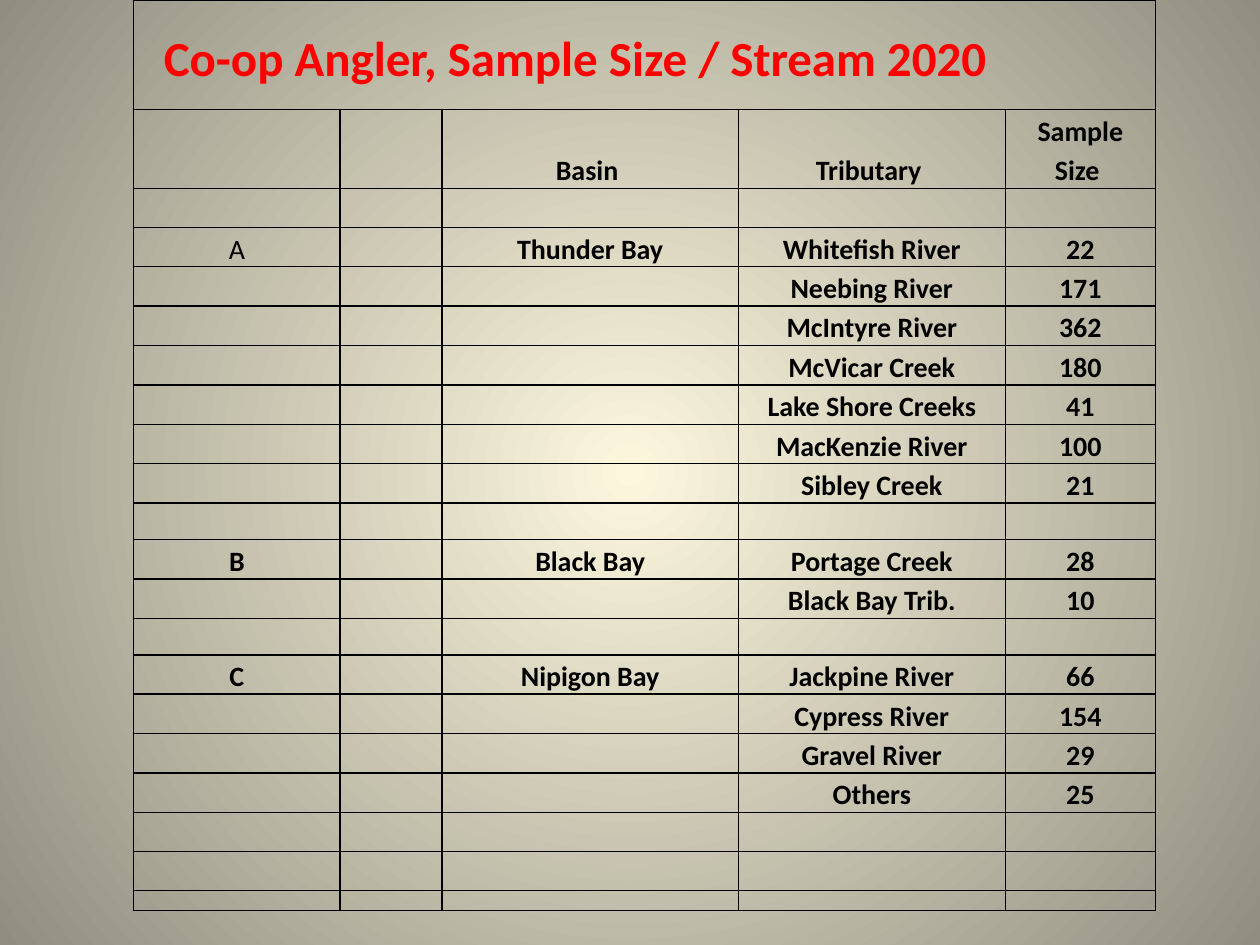
"""Build the slide with the table of angler sample sizes per stream."""
import pptx
import pptx.dml.color
import pptx.enum.text
import pptx.oxml
import pptx.oxml.ns
import pptx.util

Inches = pptx.util.Inches
ALIGN = pptx.enum.text.PP_ALIGN

THEME = {"font": "Calibri", "title": "FF0000", "text": "000000", "border": "000000",
         "glow": "FCF7DD", "edge": "918E81",
         "title_size": 28, "body_size": 16, "thin_size": 6, "border_width": 1}

TITLE = "Co-op Angler, Sample Size / Stream 2020"
HEADER = ("", "", "Basin ", "Tributary ", "Sample Size ")
BASINS = [
    ("A", "Thunder Bay", [("Whitefish River", 22), ("Neebing River", 171), ("McIntyre River", 362),
                          ("McVicar Creek", 180), ("Lake Shore Creeks", 41),
                          ("MacKenzie River", 100), ("Sibley Creek", 21)]),
    ("B", "Black Bay", [("Portage Creek", 28), ("Black Bay Trib.", 10)]),
    ("C", "Nipigon Bay", [("Jackpine River", 66), ("Cypress River", 154),
                          ("Gravel River", 29), ("Others", 25)]),
]
BLANK = ("",) * 5
COLUMN_WIDTHS = (1.64, 0.81, 2.35, 2.12, 1.19)
TITLE_HEIGHT, SPACER_HEIGHT, HEADER_HEIGHT = 0.71, 0.16, 0.62
ROW_HEIGHT, GAP_HEIGHT, LAST_HEIGHT = 0.31, 0.29, 0.16


def table_rows():
    rows = [(TITLE_HEIGHT, BLANK), (SPACER_HEIGHT, BLANK),
            (HEADER_HEIGHT, HEADER), (ROW_HEIGHT, BLANK)]
    for index, (letter, basin, streams) in enumerate(BASINS):
        if index:
            rows.append((GAP_HEIGHT, BLANK))
        for place, (stream, size) in enumerate(streams):
            lead = ("", "", "") if place else (letter, "", basin)
            rows.append((ROW_HEIGHT, (*lead, stream, str(size))))
    return rows + [(ROW_HEIGHT, BLANK)] * 2 + [(LAST_HEIGHT, BLANK)]


def write(cell, text, size=THEME["body_size"], color=THEME["text"], bold=True,
          align=ALIGN.CENTER, indent=0):
    cell.margin_left = cell.margin_right = Inches(0.06)
    cell.margin_top = cell.margin_bottom = 0
    cell.vertical_anchor = pptx.enum.text.MSO_ANCHOR.BOTTOM
    paragraph = cell.text_frame.paragraphs[0]
    paragraph.alignment = align
    if not text:
        end = pptx.oxml.parse_xml(
            f'<a:endParaRPr {pptx.oxml.ns.nsdecls("a")} sz="{size * 100}"/>')
        paragraph._p.append(end)
        return
    paragraph.line_spacing = 1.15
    if indent:
        paragraph._p.get_or_add_pPr().set("marL", str(Inches(indent)))
    run = paragraph.add_run()
    run.text = text
    run.font.name = THEME["font"]
    run.font.size = pptx.util.Pt(size)
    run.font.bold = bold
    run.font.color.rgb = pptx.dml.color.RGBColor.from_string(color)


def set_borders(cell, sides):
    properties = cell._tc.get_or_add_tcPr()
    for side in "LRTB":
        paint = (f'<a:solidFill><a:srgbClr val="{THEME["border"]}"/></a:solidFill>'
                 if side in sides else "<a:noFill/>")
        properties.append(pptx.oxml.parse_xml(
            f'<a:ln{side} {pptx.oxml.ns.nsdecls("a")} '
            f'w="{pptx.util.Pt(THEME["border_width"])}">{paint}</a:ln{side}>'))


def visible_sides(row, column):
    if row > 1:
        return "LRTB"
    outer = {0: "L", len(COLUMN_WIDTHS) - 1: "R"}.get(column, "")
    return outer + ("B" if row else "T")


def paint_background(slide):
    fill = slide.background.fill
    fill.gradient()
    for stop, position, color in zip(fill.gradient_stops, (0, 1), (THEME["glow"], THEME["edge"])):
        stop.position = position
        stop.color.rgb = pptx.dml.color.RGBColor.from_string(color)
    gradient = slide.element.find(".//" + pptx.oxml.ns.qn("a:gradFill"))
    linear = gradient.find(pptx.oxml.ns.qn("a:lin"))
    gradient.replace(linear, pptx.oxml.parse_xml(
        f'<a:path {pptx.oxml.ns.nsdecls("a")} path="circle">'
        '<a:fillToRect l="50000" t="50000" r="50000" b="50000"/></a:path>'))


def add_sample_table(slide):
    rows = table_rows()
    frame = slide.shapes.add_table(len(rows), len(COLUMN_WIDTHS), Inches(1.06), 0,
                                   Inches(sum(COLUMN_WIDTHS)),
                                   Inches(sum(height for height, _ in rows)))
    table = frame.table
    table.first_row = table.horz_banding = False
    for column, width in zip(table.columns, COLUMN_WIDTHS):
        column.width = Inches(width)
    for r, (height, texts) in enumerate(rows):
        table.rows[r].height = Inches(height)
        size = THEME["body_size"] if height >= ROW_HEIGHT else THEME["thin_size"]
        for c, text in enumerate(texts):
            cell = table.cell(r, c)
            set_borders(cell, visible_sides(r, c))
            cell.fill.background()
            if (r, c) == (0, 0):
                write(cell, TITLE, size=THEME["title_size"], color=THEME["title"],
                      align=ALIGN.LEFT, indent=0.18)
            else:
                write(cell, text, size=size, bold=text != "A")
    table.cell(0, 0).merge(table.cell(0, 3))


def main():
    deck = pptx.Presentation()
    deck.slide_width, deck.slide_height = Inches(10), Inches(7.5)
    slide = deck.slides.add_slide(deck.slide_layouts[6])
    paint_background(slide)
    add_sample_table(slide)
    deck.save("out.pptx")


if __name__ == "__main__":
    main()
